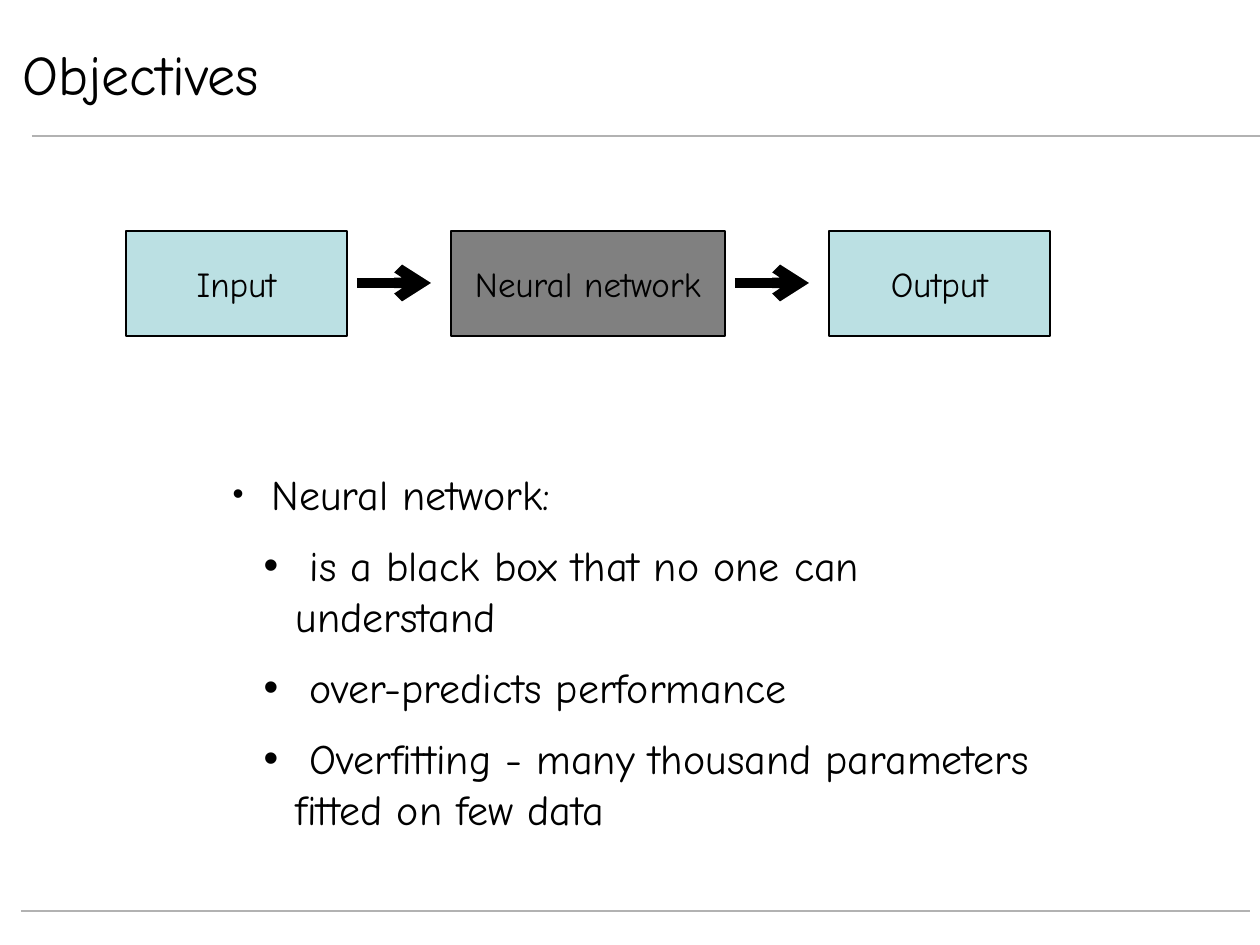
from lxml.etree import SubElement
from pptx import Presentation
from pptx.dml.color import RGBColor
from pptx.enum.shapes import MSO_CONNECTOR, MSO_SHAPE
from pptx.enum.text import MSO_ANCHOR, MSO_AUTO_SIZE, PP_ALIGN
from pptx.oxml.ns import qn
from pptx.util import Emu, Pt

FONT = "Comic Neue"
BULLET_HANG = 32
FLOW_TOP, FLOW_HEIGHT = 231, 105
FLOW_BOXES = [
    ("Input", 126, 221, "BBE0E3"),
    ("Neural network", 451, 274, "808080"),
    ("Output", 829, 221, "BBE0E3"),
]
ARROW_GAP, ARROW_LENGTH = 10, 74
POINTS = [
    "is a black box that no one can understand",
    "over-predicts performance",
    "Overfitting - many thousand parameters fitted on few data",
]


def px(length):
    """Turn pixels into EMU."""
    return Emu(round(length * 914400 / 126))


def color(value):
    """Turn a hex string into a colour."""
    return RGBColor.from_string(value)


def place(shape, left, top, width, height):
    """Move and size a shape."""
    shape.left, shape.top = px(left), px(top)
    shape.width, shape.height = px(width), px(height)


def paint(shape, fill, line):
    """Give a shape a plain fill and a thin outline."""
    shape.fill.solid()
    shape.fill.fore_color.rgb = color(fill)
    shape.line.color.rgb = color(line)
    shape.line.width = Pt(0.75)


def write(paragraph, text, size=24, font=FONT, bold=False, align=PP_ALIGN.LEFT):
    """Add a formatted run to a paragraph."""
    paragraph.alignment = align
    run = paragraph.add_run()
    run.text = text
    run.font.name = font
    run.font.size = Pt(size)
    run.font.bold = bold
    run.font.color.rgb = color("000000")


def add_line(slide, start, end, line, width, arrow=False):
    """Draw a straight line, with an arrowhead if asked."""
    connector = slide.shapes.add_connector(
        MSO_CONNECTOR.STRAIGHT, *map(px, start + end))
    connector.line.color.rgb = color(line)
    connector.line.width = Pt(width)
    properties = connector._element.spPr
    if arrow:
        SubElement(properties.find(qn("a:ln")), qn("a:tailEnd"), type="arrow")
    SubElement(properties, qn("a:effectLst"))


def add_box(slide, text, left, width, fill):
    """Draw one labelled box of the flow."""
    box = slide.shapes.add_shape(
        MSO_SHAPE.RECTANGLE, *map(px, (left, FLOW_TOP, width, FLOW_HEIGHT)))
    box.shadow.inherit = False
    paint(box, fill, "000000")
    frame = box.text_frame
    frame.word_wrap = False
    frame.vertical_anchor = MSO_ANCHOR.MIDDLE
    write(frame.paragraphs[0], text, size=20, align=PP_ALIGN.CENTER)


def add_flow(slide):
    """Draw the boxes and the arrows between them."""
    for box in FLOW_BOXES:
        add_box(slide, *box)
    middle = FLOW_TOP + FLOW_HEIGHT // 2
    for _, left, width, _ in FLOW_BOXES[:-1]:
        start = left + width + ARROW_GAP
        add_line(slide, (start, middle), (start + ARROW_LENGTH, middle),
                 "000000", 6, arrow=True)


def set_bullet(paragraph, level, margin):
    """Give a paragraph a hanging bullet at a level."""
    paragraph.level = level
    properties = paragraph._p.get_or_add_pPr()
    properties.set("marL", str(px(margin)))
    properties.set("indent", str(-px(BULLET_HANG)))
    SubElement(properties, qn("a:buChar"), char="•")


def fill_title(title):
    """Place and write the title."""
    place(title, 10, 42, 987, 63)
    paint(title, "FFFFFF", "FFFFFF")
    frame = title.text_frame
    frame.auto_size = MSO_AUTO_SIZE.NONE
    frame.vertical_anchor = MSO_ANCHOR.MIDDLE
    write(frame.paragraphs[0], "Objectives", size=32)


def fill_body(body):
    """Place and write the bulleted list."""
    place(body, 220, 462, 837, 391)
    frame = body.text_frame
    frame.word_wrap = True
    frame.auto_size = MSO_AUTO_SIZE.SHAPE_TO_FIT_TEXT
    heading = frame.paragraphs[0]
    set_bullet(heading, 0, BULLET_HANG)
    heading.space_before = Pt(0)
    write(heading, " ", size=18, font="Cabin", bold=True)
    write(heading, "Neural network:")
    for point in POINTS:
        paragraph = frame.add_paragraph()
        set_bullet(paragraph, 1, 63)
        paragraph.space_before = Pt(12)
        write(paragraph, f" {point}")


def main():
    """Build and save the slide."""
    presentation = Presentation()
    presentation.slide_width, presentation.slide_height = px(1260), px(945)
    slide = presentation.slides.add_slide(presentation.slide_layouts[1])
    add_line(slide, (32, 136), (1260, 136), "B2B2B2", 1.5)
    add_line(slide, (21, 911), (1250, 911), "B2B2B2", 1.5)
    add_flow(slide)
    fill_body(slide.placeholders[1])
    fill_title(slide.shapes.title)
    presentation.save("out.pptx")


if __name__ == "__main__":
    main()
